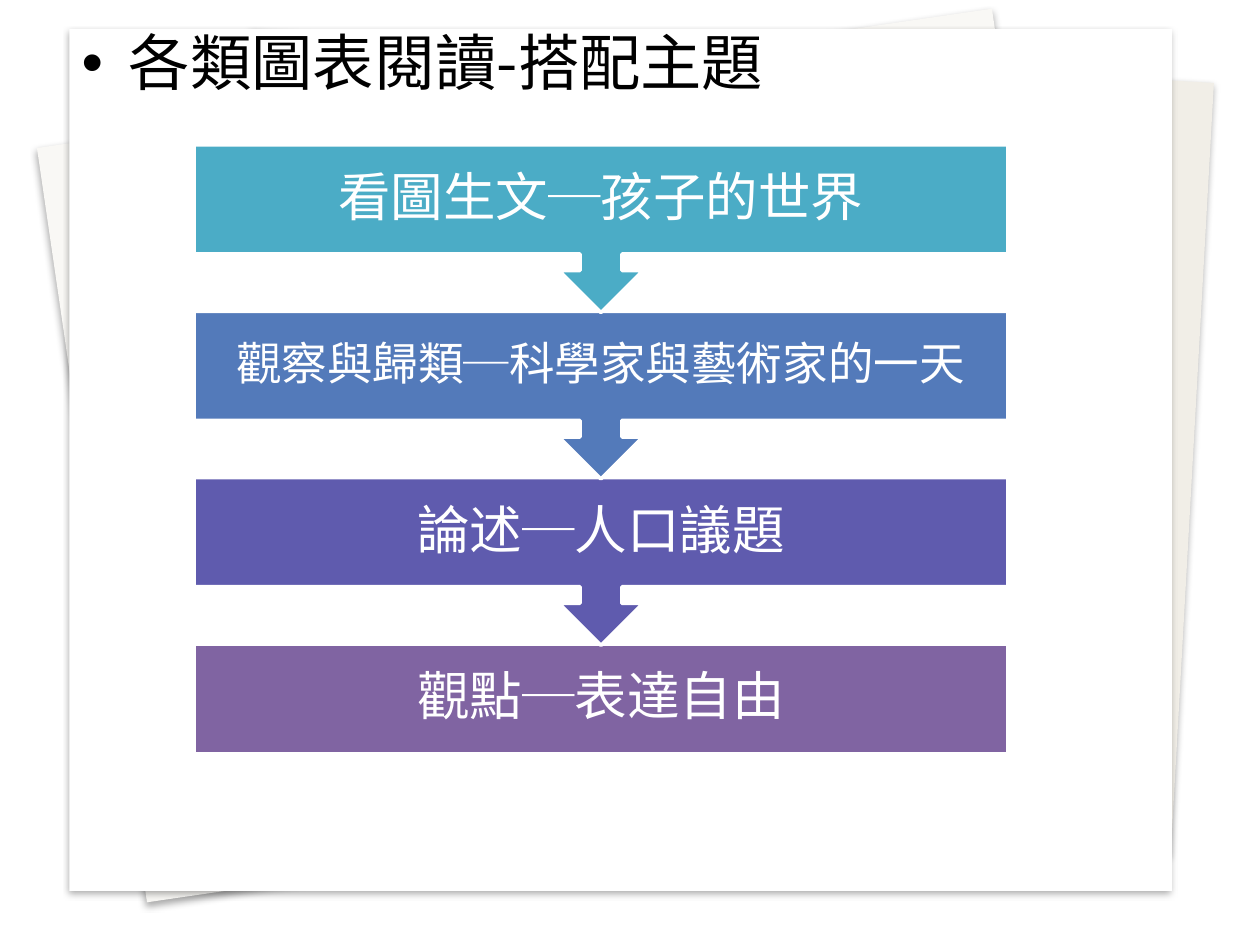
from lxml.etree import SubElement
from pptx import Presentation
from pptx.dml.color import RGBColor
from pptx.enum.shapes import MSO_SHAPE
from pptx.enum.text import MSO_ANCHOR, PP_ALIGN
from pptx.oxml import parse_xml
from pptx.oxml.ns import nsdecls, qn
from pptx.util import Pt

LEFT, TOP, WIDTH, BOX_H, CALLOUT_H, PITCH = 110.9, 82.8, 465, 62.6, 95.8, 95.1
SHEETS = [
    ((130.3, 31.7, 551.5, 441.4), 3.2, "F1EEE7"),
    ((49.7, 42.5, 551.5, 435.6), 351.7, "F9F8F5"),
    ((39.6, 16.6, 630, 492.5), 0, "FFFFFF"),
]
STEPS = [
    ("看圖生文─孩子的世界", "4BACC6", 30, 16.5),
    ("觀察與歸類─科學家與藝術家的一天", "537ABA", 26, 14.4),
    ("論述─人口議題", "5F5BAE", 30, 16.5),
    ("觀點─表達自由", "8064A2", 30, 16.5),
]


def color(value):
    """Turn a hex string into a colour."""
    return RGBColor.from_string(value)


def set_all(obj, formats):
    """Set each attribute in formats on obj."""
    for name, value in formats.items():
        setattr(obj, name, value)


def add_block(s, kind, box, fill, rotation=0, line=None):
    """Add a filled shape, with an optional 2 pt outline."""
    sp = s.shapes.add_shape(kind, *map(Pt, box))
    sp.shadow.inherit = False
    sp.rotation = rotation
    sp.fill.solid()
    sp.fill.fore_color.rgb = color(fill)
    if line:
        sp.line.color.rgb = color(line)
        sp.line.width = Pt(2)
    else:
        sp.line.fill.background()
    return sp


def add_sheet(s, box, rotation, fill):
    """Add a sheet of paper with a soft shadow below it."""
    sp = add_block(s, MSO_SHAPE.RECTANGLE, box, fill, rotation)
    effects = sp._element.spPr.find(qn("a:effectLst"))
    effects.append(parse_xml(
        f'<a:outerShdw {nsdecls("a")} blurRad="{Pt(3.5)}" dist="{Pt(2.2)}" '
        'dir="5400000" algn="t" rotWithShape="0"><a:srgbClr val="000000">'
        '<a:alpha val="32000"/></a:srgbClr></a:outerShdw>'))


def add_text(s, box, text, size, font, fill, frame, align, bullet=None):
    """Add a text box with one paragraph."""
    tf = s.shapes.add_textbox(*map(Pt, box)).text_frame
    set_all(tf, {"word_wrap": True, **frame})
    p = tf.paragraphs[0]
    set_all(p, {"alignment": align, "line_spacing": 0.9})
    if bullet:
        pPr = p._p.get_or_add_pPr()
        pPr.set("marL", str(Pt(27)))
        pPr.set("indent", str(Pt(-27)))
        SubElement(pPr, qn("a:buFont"), typeface="Arial")
        SubElement(pPr, qn("a:buChar"), char=bullet)
    r = p.add_run()
    r.text = text
    set_all(r.font, {"size": Pt(size), "name": font})
    r.font.color.rgb = color(fill)
    SubElement(r._r.get_or_add_rPr(), qn("a:ea"), typeface=font)


def add_step(s, index, text, fill, size, inset):
    """Add one step, pointing down unless it is the last."""
    top = TOP + index * PITCH
    if index < len(STEPS) - 1:
        kind, height, rotation = MSO_SHAPE.UP_ARROW_CALLOUT, CALLOUT_H, 180
    else:
        kind, height, rotation = MSO_SHAPE.RECTANGLE, BOX_H, 0
    add_block(s, kind, (LEFT, top, WIDTH, height), fill, rotation, "FFFFFF")
    sides = ("left", "top", "right", "bottom")
    frame = {f"margin_{side}": Pt(inset) for side in sides}
    frame["vertical_anchor"] = MSO_ANCHOR.MIDDLE
    add_text(s, (LEFT, top, WIDTH, BOX_H), text, size, "Noto Sans CJK JP",
             "FFFFFF", frame, PP_ALIGN.CENTER)


def main():
    """Build the slide and save it."""
    prs = Presentation()
    set_all(prs, {"slide_width": Pt(720), "slide_height": Pt(540)})
    s = prs.slides.add_slide(prs.slide_layouts[6])
    for sheet in SHEETS:
        add_sheet(s, *sheet)
    for index, step in reversed(list(enumerate(STEPS))):
        add_step(s, index, *step)
    add_text(s, (39.6, 15.1, 553, 123.8), "各類圖表閱讀-搭配主題", 35,
             "Noto Sans CJK SC", "000000", {}, PP_ALIGN.LEFT, "•")
    prs.save("out.pptx")


if __name__ == "__main__":
    main()
